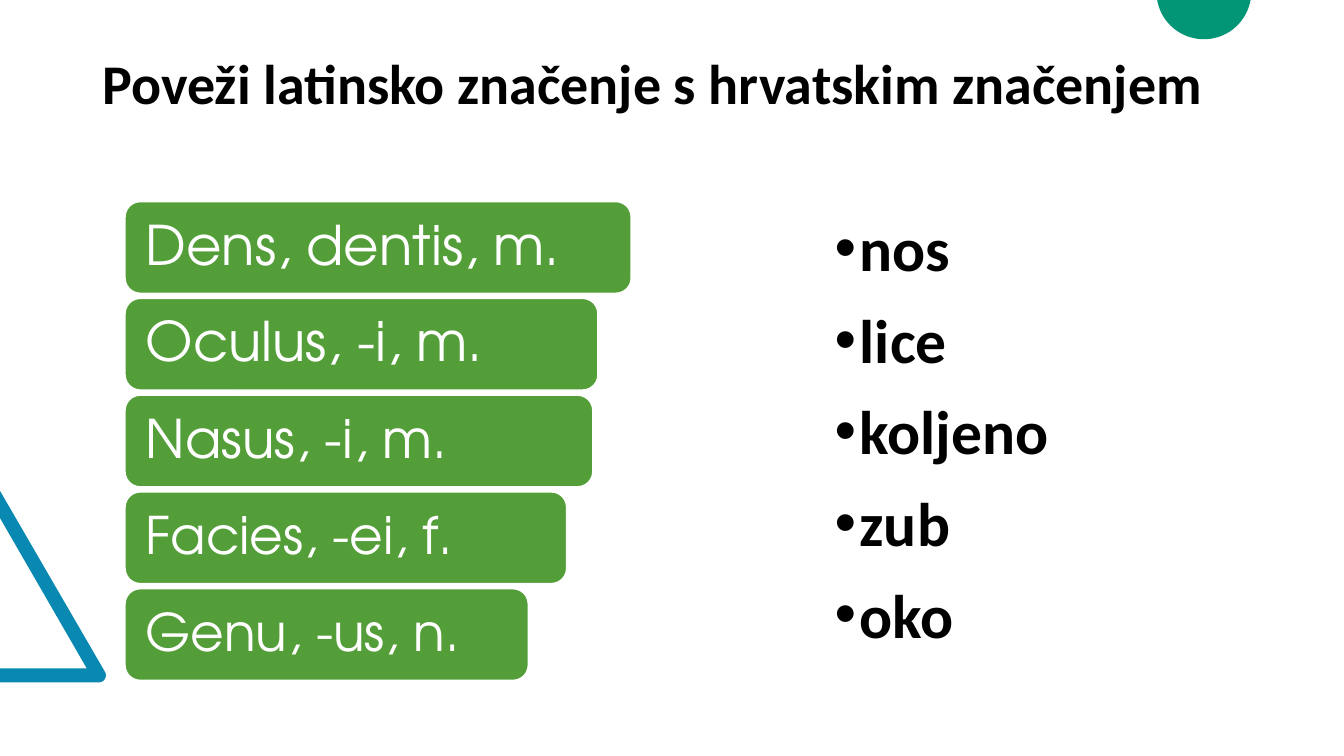
from dataclasses import dataclass
from math import cos, radians, sin

from lxml.etree import SubElement
from pptx import Presentation
from pptx.dml.color import RGBColor as Color
from pptx.enum.shapes import MSO_SHAPE as Shape
from pptx.enum.text import MSO_ANCHOR as Anchor, PP_ALIGN as Align
from pptx.oxml.ns import qn
from pptx.util import Inches, Pt

TITLE = "Poveži latinsko značenje s hrvatskim značenjem"
LATIN = [
    ("Dens, dentis, m.", 5.02, 39),
    ("Oculus, -i, m.", 4.69, 39),
    ("Nasus, -i, m.", 4.64, 38),
    ("Facies, -ei, f.", 4.38, 37),
    ("Genu, -us, n.", 4.0, 37),
]
CROATIAN = ["nos", "lice", "koljeno", "zub", "oko"]


@dataclass(frozen=True)
class Theme:
    card: str = "549E39"
    triangle: str = "0989B1"
    circle: str = "029676"
    light: str = "FFFFFF"
    dark: str = "000000"
    heading_font: str = "Calibri"
    card_font: str = "TeX Gyre Adventor"
    title_size: int = 40
    answer_size: int = 44


THEME = Theme()
WIDTH, HEIGHT = 13.33, 7.5
CARD_LEFT, CARD_TOP, CARD_HEIGHT, CARD_STEP = 1.24, 2, 0.91, 0.96


def color(value):
    return Color.from_string(value)


def write(shape, lines, *, font, size, ink, bold=False, align=Align.LEFT,
          anchor=Anchor.TOP, spacing=0.9, before=0, inset=0.1, bullet=None):
    frame = shape.text_frame
    frame.word_wrap = True
    frame.vertical_anchor = anchor
    frame.margin_left = frame.margin_right = Inches(inset)
    frame.margin_top = frame.margin_bottom = Inches(0.05)
    for index, line in enumerate(lines):
        para = frame.add_paragraph() if index else frame.paragraphs[0]
        para.alignment = align
        para.line_spacing = spacing
        para.space_before = Pt(before)
        if bullet:
            props = para._p.get_or_add_pPr()
            props.set("marL", str(Inches(0.25)))
            props.set("indent", str(-Inches(0.25)))
            SubElement(props, qn("a:buFont")).set("typeface", "Arial")
            SubElement(props, qn("a:buChar")).set("char", bullet)
        span = para.add_run()
        span.text = line
        span.font.name = font
        span.font.size = Pt(size)
        span.font.bold = bold
        span.font.color.rgb = color(ink)


def arc(x, y, radius, start, end, steps=40):
    angles = [radians(start + (end - start) * step / steps) for step in range(steps + 1)]
    return [(x + radius * cos(angle), y + radius * sin(angle)) for angle in angles]


def add_outline(page, points, fill):
    first, *rest = [(Inches(x), Inches(y)) for x, y in points]
    builder = page.shapes.build_freeform(*first)
    builder.add_line_segments(rest, close=True)
    shape = builder.convert_to_shape()
    shape.shadow.inherit = False
    shape.fill.solid()
    shape.fill.fore_color.rgb = color(fill)
    shape.line.fill.background()


def add_box(page, left, top, width, height):
    return page.shapes.add_textbox(*map(Inches, (left, top, width, height)))


def add_card(page, row, text, width, size):
    card = page.shapes.add_shape(
        Shape.ROUNDED_RECTANGLE, Inches(CARD_LEFT), Inches(CARD_TOP + row * CARD_STEP),
        Inches(width), Inches(CARD_HEIGHT))
    card.shadow.inherit = False
    card.fill.solid()
    card.fill.fore_color.rgb = color(THEME.card)
    card.line.color.rgb = color(THEME.light)
    card.line.width = Pt(1)
    write(card, [text], font=THEME.card_font, size=size, ink=THEME.light,
          align=Align.JUSTIFY, anchor=Anchor.MIDDLE, inset=0.16)


def main():
    deck = Presentation()
    deck.slide_width, deck.slide_height = Inches(WIDTH), Inches(HEIGHT)
    page = deck.slides.add_slide(deck.slide_layouts[6])

    corner = arc(0.98, 6.7, 0.07, -30, 90)
    add_outline(page, [(0, 6.77), (0, 6.63), (0.86, 6.63), (0, 5.14), (0, 4.87), *corner],
                THEME.triangle)
    add_outline(page, arc(11.94, -0.08, 0.47, 10, 170), THEME.circle)

    write(add_box(page, 0.92, 0.44, 11.5, 0.84), [TITLE], font=THEME.heading_font,
          size=THEME.title_size, ink=THEME.dark, bold=True, anchor=Anchor.MIDDLE)
    for row, (text, width, size) in enumerate(LATIN):
        add_card(page, row, text, width, size)
    write(add_box(page, 8.18, CARD_TOP, 3.83, 4.76), CROATIAN, font=THEME.heading_font,
          size=THEME.answer_size, ink=THEME.dark, bold=True, spacing=1.05, before=10,
          bullet="•")
    deck.save("out.pptx")


if __name__ == "__main__":
    main()
